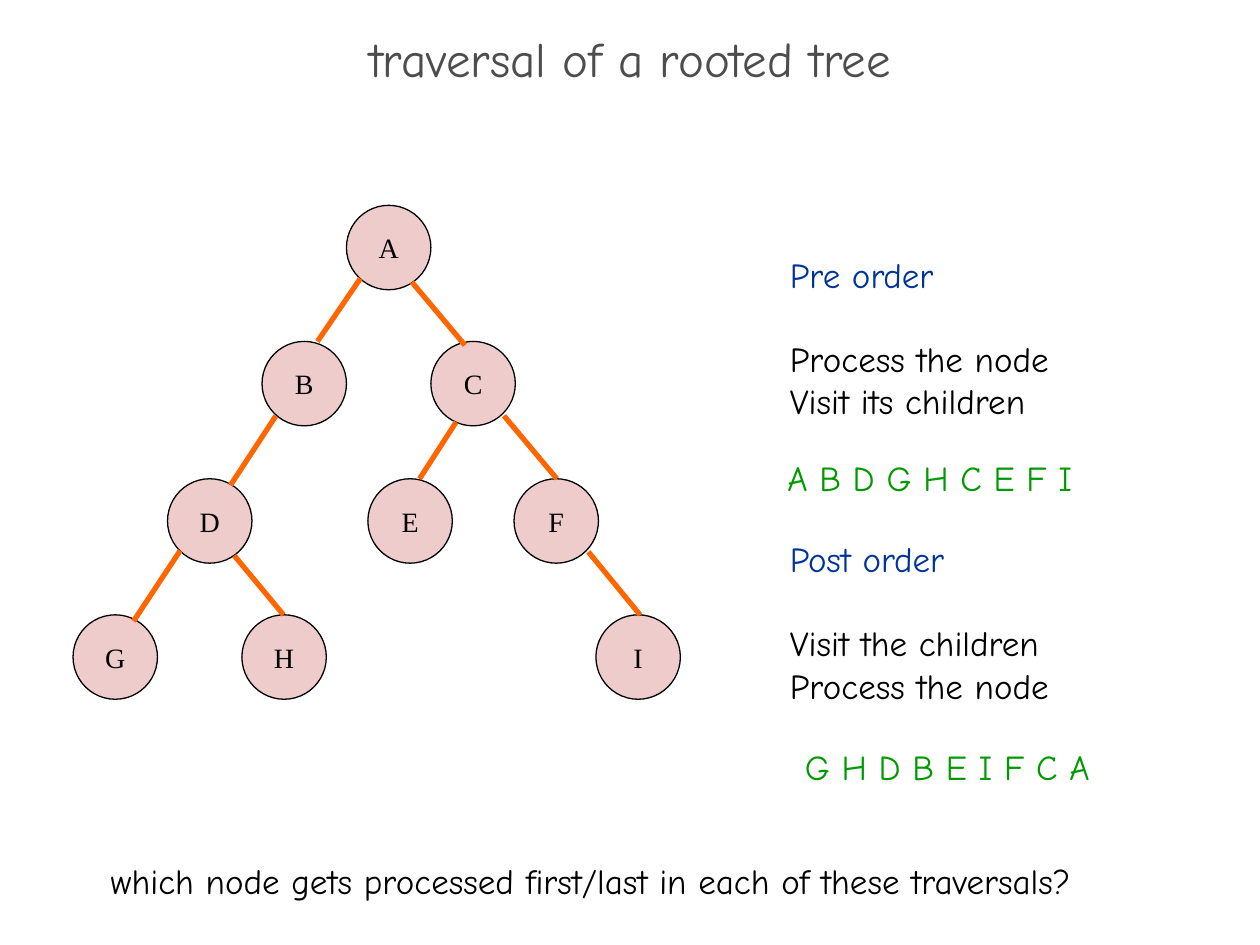
from lxml import etree
from pptx import Presentation
from pptx import util as u
from pptx.dml.color import RGBColor
from pptx.enum import shapes, text
from pptx.oxml.ns import qn

PX = u.Inches(1) // 100  # 100 px to the inch

BLACK = RGBColor(0x00, 0x00, 0x00)
GREY = RGBColor(0x4D, 0x4D, 0x4D)
PINK = RGBColor(0xEE, 0xCC, 0xCC)
ORANGE = RGBColor(0xFF, 0x66, 0x00)
BLUE = RGBColor(0x00, 0x33, 0x99)
GREEN = RGBColor(0x00, 0x99, 0x00)

NODE_SIZE = 67
LEVEL_TOPS = (163, 271, 380, 488)
LEVELS = (  # left edge of each node, level by level
    {"A": 275},
    {"B": 208, "C": 342},
    {"D": 133, "E": 292, "F": 408},
    {"G": 58, "H": 192, "I": 473},
)
EDGES = (  # x1, y1, x2, y2
    (286, 221, 252, 271),  # A-B
    (219, 330, 183, 385),  # B-D
    (143, 437, 106, 493),  # D-G
    (327, 224, 369, 274),  # A-C
    (400, 330, 442, 380),  # C-F
    (467, 438, 508, 488),  # F-I
    (186, 441, 225, 488),  # D-H
    (362, 335, 333, 380),  # C-E
)


class TreeSlide:
    body_font = "Comic Neue"
    node_font = "Times New Roman"

    def __init__(self, presentation):
        self.slide = presentation.slides.add_slide(presentation.slide_layouts[6])
        self.tree = self.slide.shapes.add_group_shape()

    def style(self, paragraph, font, size, color):
        paragraph.font.name = font
        paragraph.font.size = u.Pt(size)
        paragraph.font.color.rgb = color

    def text_box(self, left, top, width, height, lines, size=20, wrap=False):
        """Add (wording, colour) lines and return the text frame."""
        box = self.slide.shapes.add_textbox(
            left * PX, top * PX, width * PX, height * PX)
        frame = box.text_frame
        frame.word_wrap = wrap
        frame.text = "\n".join(wording for wording, _ in lines)
        for paragraph, (_, color) in zip(frame.paragraphs, lines):
            self.style(paragraph, self.body_font, size, color)
        return frame

    def title(self, wording):
        frame = self.text_box(0, 27, 1000, 50, [(wording, GREY)], 28, wrap=True)
        frame.vertical_anchor = text.MSO_ANCHOR.MIDDLE
        frame.paragraphs[0].alignment = text.PP_ALIGN.CENTER
        frame.paragraphs[0].line_spacing = 0.7

    def order_rule(self, top, height, heading, steps):
        lines = [(heading, BLUE)] + [(step, BLACK) for step in steps]
        frame = self.text_box(617, top, 249, height, lines)
        frame.paragraphs[0].space_after = u.Pt(24)

    def node(self, left, top, letter):
        shape = self.tree.shapes.add_shape(
            shapes.MSO_SHAPE.OVAL, left * PX, top * PX,
            NODE_SIZE * PX, NODE_SIZE * PX)
        shape.shadow.inherit = False
        shape.fill.solid()
        shape.fill.fore_color.rgb = PINK
        shape.line.color.rgb = BLACK
        shape.line.width = u.Pt(0.75)
        frame = shape.text_frame
        frame.word_wrap = False
        frame.vertical_anchor = text.MSO_ANCHOR.MIDDLE
        frame.text = letter
        paragraph = frame.paragraphs[0]
        paragraph.alignment = text.PP_ALIGN.CENTER
        self.style(paragraph, self.node_font, 16, BLACK)

    def edge(self, *ends):
        connector = self.tree.shapes.add_connector(
            shapes.MSO_CONNECTOR.STRAIGHT, *(end * PX for end in ends))
        connector.line.color.rgb = ORANGE
        connector.line.width = u.Pt(3)
        etree.SubElement(connector._element.spPr, qn("a:effectLst"))


def main():
    presentation = Presentation()
    presentation.slide_width = 1000 * PX
    presentation.slide_height = 750 * PX
    page = TreeSlide(presentation)

    page.title("traversal of a rooted tree")

    # Tree
    for top, level in zip(LEVEL_TOPS, LEVELS):
        for letter, left in level.items():
            page.node(left, top, letter)
    for ends in EDGES:
        page.edge(*ends)

    # Traversal orders
    page.order_rule(196, 172, "Pre order",
                    ["Process the node", "Visit its children"])
    page.text_box(615, 357, 253, 44, [("A B D G H C E F I", GREEN)])
    page.order_rule(422, 145, "Post order",
                    ["Visit the children", "Process the node"])
    page.text_box(629, 587, 253, 44, [("G H D B E I F C A", GREEN)])

    # Question
    page.text_box(78, 677, 879, 44, [
        ("which node gets processed first/last in each of these traversals?",
         BLACK)])

    presentation.save("out.pptx")


if __name__ == "__main__":
    main()
